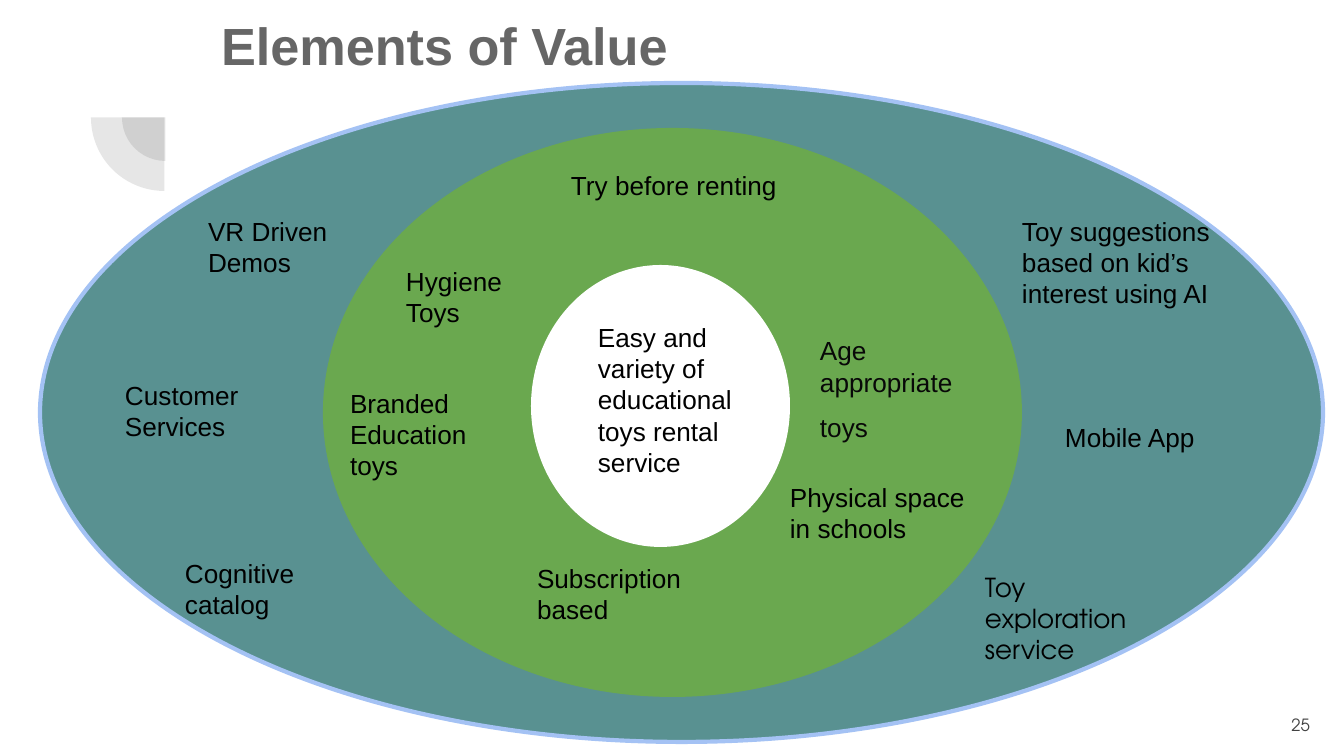
from lxml import etree
from pptx import Presentation
from pptx.dml.color import RGBColor
from pptx.enum import shapes, text
from pptx.oxml.ns import qn
from pptx.util import Pt

WIDTH, HEIGHT = 1344, 756
SCALE = 9144000 / WIDTH  # EMU per px
PADDING = 13

TITLE = "Elements of Value"
PAGE_NUMBER = "25"

# Quarter circles: left, top, diameter
QUARTERS = [(122, 74, 87), (91, 44, 147)]

# Rings from the outside in: left, top, width, height, fill, outline
RINGS = [
    (40, 83, 1283, 659, "599191", "A4C2F4"),
    (323, 128, 699, 569, "6AA84F", None),
    (531, 265, 259, 282, "FFFFFF", None),
]

# Labels: lines, left, top, width, height, padding
LABELS = [
    # Core
    (["Easy and variety of educational toys rental service"], 598, 321, 153, 146, 0),
    # Middle ring
    (["Try before renting"], 571, 169, 216, 54, 0),
    (["Hygiene", "Toys"], 406, 265, 216, 54, 0),
    (["Branded Education toys"], 350, 387, 164, 134, 0),
    (["Physical space in schools"], 790, 481, 183, 54, 0),
    (["Subscription", "based"], 524, 549, 208, 90, PADDING),
    # Outer ring
    (["VR Driven Demos"], 195, 202, 159, 82, PADDING),
    (["Customer Services"], 125, 379, 210, 70, 0),
    (["Cognitive catalog"], 172, 544, 185, 82, PADDING),
    (["Toy suggestions based on kid’s interest using AI"], 1009, 202, 223, 112, PADDING),
    (["Mobile App"], 1052, 408, 191, 70, PADDING),
]
EXPLORATION = (["Toy exploration service"], 972, 558, 185, 82, PADDING)
AGE = (["Age appropriate toys"], 820, 333, 152, 54, 0)


def px(*lengths):
    return [round(length * SCALE) for length in lengths]


def color(value):
    return RGBColor.from_string(value)


def style(paragraph, size, fill, font="Arial", bold=False):
    paragraph.font.size = Pt(size)
    paragraph.font.name = font
    paragraph.font.bold = bold
    paragraph.font.color.rgb = color(fill)


def prepare(frame, padding):
    frame.word_wrap = True
    frame.auto_size = text.MSO_AUTO_SIZE.NONE
    frame.vertical_anchor = text.MSO_ANCHOR.TOP
    inset = px(padding)[0]
    frame.margin_left = frame.margin_right = inset
    frame.margin_top = frame.margin_bottom = inset


def add_shape(kind, bounds, fill):
    shape = page.shapes.add_shape(kind, *px(*bounds))
    shape.shadow.inherit = False
    shape.fill.solid()
    shape.fill.fore_color.rgb = color(fill)
    shape.line.fill.background()
    return shape


def add_label(lines, left, top, width, height, padding,
              size=14, fill="000000", font="Arial", spacing=Pt(16.8)):
    box = page.shapes.add_textbox(*px(left, top, width, height))
    frame = box.text_frame
    prepare(frame, padding)
    frame.text = "\n".join(lines)
    for paragraph in frame.paragraphs:
        style(paragraph, size, fill, font)
        paragraph.line_spacing = spacing
    return frame


deck = Presentation()
deck.slide_width, deck.slide_height = px(WIDTH, HEIGHT)
page = deck.slides.add_slide(deck.slide_layouts[5])

# Title
title = page.shapes.title
title.left, title.top, title.width, title.height = px(208, 0, 1034, 147)
title.text = TITLE
prepare(title.text_frame, PADDING)
heading = title.text_frame.paragraphs[0]
heading.alignment = text.PP_ALIGN.LEFT
style(heading, 28, "666666", bold=True)

# Translucent quarter circles
for left, top, diameter in QUARTERS:
    quarter = add_shape(shapes.MSO_SHAPE.PIE, (left, top, diameter, diameter), "424242")
    quarter.adjustments[0] = 54   # 90 degrees
    quarter.adjustments[1] = 108  # 180 degrees
    shade = quarter.fill._xPr.find(".//" + qn("a:srgbClr"))
    etree.SubElement(shade, qn("a:alpha"), val="13000")

# Page number
number = add_label([PAGE_NUMBER], 1242, 696, 81, 58, PADDING,
                   9, "424242", "TeX Gyre Adventor", None)
number.vertical_anchor = text.MSO_ANCHOR.MIDDLE
number.paragraphs[0].alignment = text.PP_ALIGN.RIGHT

# Rings
for *bounds, fill, outline in RINGS:
    ring = add_shape(shapes.MSO_SHAPE.OVAL, bounds, fill)
    if outline:
        ring.line.color.rgb = color(outline)
        ring.line.width = Pt(2.25)

# Labels
for label in LABELS:
    add_label(*label)
add_label(*EXPLORATION, font="TeX Gyre Adventor")

# The larger closing space makes the last line taller
age = add_label(*AGE, fill="080808", spacing=1.04)
span = age.paragraphs[0].add_run()
span.text = " "
span.font.size = Pt(20)
span.font.name = "League Spartan"

deck.save("out.pptx")
